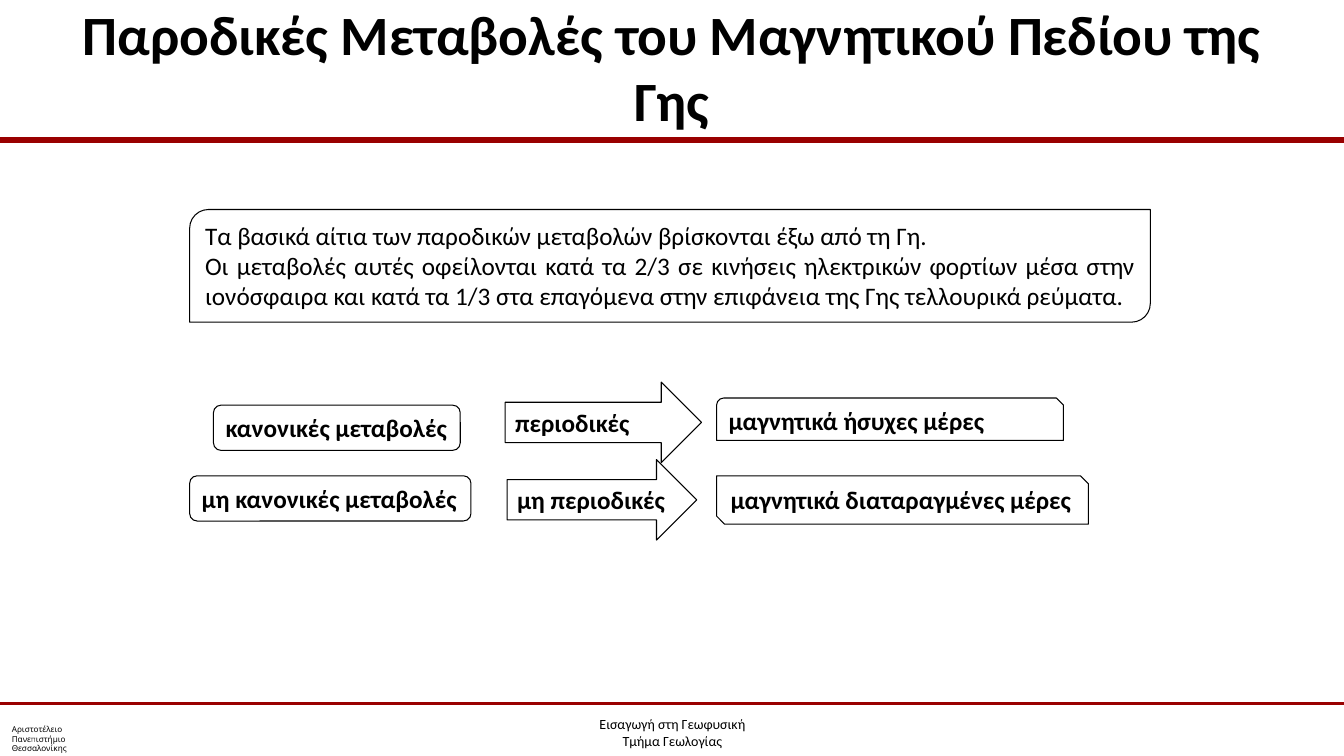
import pptx
import pptx.dml.color
import pptx.enum.shapes
import pptx.enum.text
import pptx.oxml.xmlchemy
import pptx.util

Cm = pptx.util.Cm
Pt = pptx.util.Pt
Kind = pptx.enum.shapes.MSO_SHAPE
Align = pptx.enum.text.PP_ALIGN
Anchor = pptx.enum.text.MSO_ANCHOR
AutoSize = pptx.enum.text.MSO_AUTO_SIZE

COLORS = {"text": "000000", "outline": "000000", "rule": "990000"}
WIDTH, HEIGHT = 33.87, 19.05


def color(name):
    return pptx.dml.color.RGBColor.from_string(COLORS[name])


def write_text(frame, text, size=18, font="Calibri", bold=False, align=Align.LEFT,
               anchor=Anchor.TOP, wrap=True, first_spacing=None):
    frame.word_wrap = wrap
    frame.vertical_anchor = anchor
    for index, line in enumerate(text.split("\n")):
        paragraph = frame.add_paragraph() if index else frame.paragraphs[0]
        paragraph.alignment = align
        run = paragraph.add_run()
        run.text = line
        run.font.size = Pt(size)
        run.font.name = font
        run.font.bold = bold
        run.font.color.rgb = color("text")
    if first_spacing:
        frame.paragraphs[0].line_spacing = first_spacing


class SlideBuilder:
    def __init__(self, slide):
        self.slide = slide

    def rule(self, top, weight):
        connector = self.slide.shapes.add_connector(
            pptx.enum.shapes.MSO_CONNECTOR.STRAIGHT, Cm(0), Cm(top), Cm(WIDTH), Cm(top))
        connector.line.color.rgb = color("rule")
        connector.line.width = Pt(weight)
        properties = connector._element.spPr
        properties.append(pptx.oxml.xmlchemy.OxmlElement("a:effectLst"))

    def label(self, box, text, **text_format):
        shape = self.slide.shapes.add_textbox(*map(Cm, box))
        write_text(shape.text_frame, text, **text_format)
        return shape

    def outlined(self, kind, box, text, **text_format):
        shape = self.slide.shapes.add_shape(kind, *map(Cm, box))
        shape.shadow.inherit = False
        shape.fill.background()
        shape.line.color.rgb = color("outline")
        shape.line.width = Pt(0.75)
        write_text(shape.text_frame, text, **text_format)
        shape.text_frame.auto_size = AutoSize.SHAPE_TO_FIT_TEXT


def main():
    presentation = pptx.Presentation()
    presentation.slide_width = Cm(WIDTH)
    presentation.slide_height = Cm(HEIGHT)
    builder = SlideBuilder(presentation.slides.add_slide(presentation.slide_layouts[6]))

    builder.rule(3.53, 4)
    builder.rule(17.73, 2)
    builder.label((0.05, 18.19, 2.67, 0.86), "Αριστοτέλειο\nΠανεπιστήμιο\nΘεσσαλονίκης",
                  size=5.8, font="Quicksand", anchor=Anchor.MIDDLE)
    footer = builder.label((11.61, 17.53, 10.67, 1.52), "Εισαγωγή στη Γεωφυσική\nΤμήμα Γεωλογίας",
                           size=10, align=Align.CENTER, first_spacing=2.2)
    footer.text_frame.margin_top = footer.text_frame.margin_bottom = 0

    builder.outlined(
        Kind.ROUND_2_DIAG_RECTANGLE, (4.78, 5.28, 24.21, 2.84),
        "Τα βασικά αίτια των παροδικών μεταβολών βρίσκονται έξω από τη Γη.\n"
        "Οι μεταβολές αυτές οφείλονται κατά τα 2/3 σε κινήσεις ηλεκτρικών φορτίων μέσα στην "
        "ιονόσφαιρα και κατά τα 1/3 στα επαγόμενα στην επιφάνεια της Γης τελλουρικά ρεύματα.",
        align=Align.JUSTIFY)

    variations = [
        (Kind.ROUNDED_RECTANGLE, (5.38, 10.21, 6.22, 1.14), "κανονικές μεταβολές", False),
        (Kind.RIGHT_ARROW, (12.73, 9.63, 4.95, 2.03), "περιοδικές", True),
        (Kind.SNIP_ROUND_RECTANGLE, (18.06, 10.03, 8.74, 1.07), "μαγνητικά ήσυχες μέρες", True),
        (Kind.ROUNDED_RECTANGLE, (4.78, 11.99, 7.09, 1.14), "μη κανονικές μεταβολές", False),
        (Kind.RIGHT_ARROW, (12.78, 11.58, 4.78, 2.03), "μη περιοδικές", False),
        (Kind.SNIP_2_DIAG_RECTANGLE, (18.06, 11.99, 9.37, 1.22),
         "μαγνητικά διαταραγμένες μέρες", False),
    ]
    for kind, box, text, wrap in variations:
        builder.outlined(kind, box, text, bold=True, wrap=wrap)

    builder.label((1.69, 0.08, 30.48, 3.18), "Παροδικές Μεταβολές του Μαγνητικού Πεδίου της Γης",
                  size=39.6, bold=True, align=Align.CENTER, anchor=Anchor.MIDDLE)
    presentation.save("out.pptx")


if __name__ == "__main__":
    main()
